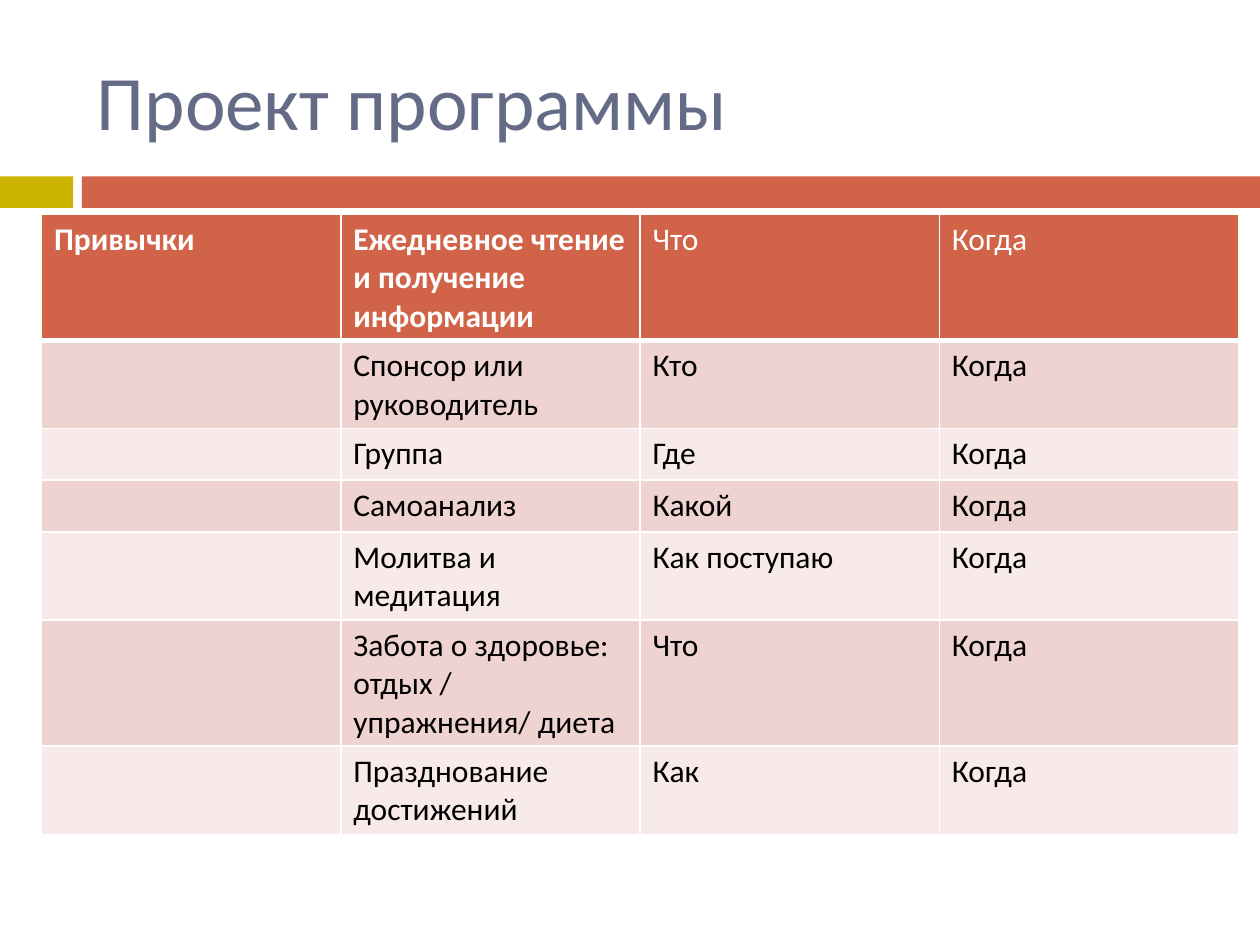
from lxml import etree
from pptx import Presentation
from pptx import util as u
from pptx.dml.color import RGBColor
from pptx.enum import shapes, text
from pptx.oxml.ns import qn

WIDTH, HEIGHT = u.Inches(10), u.Inches(7.5)
FONT = "Calibri"
COLORS = {
    "title": "646B86",
    "accent": "CCB400",
    "header": "D16349",
    "band_dark": "EED3D0",
    "band_light": "F7EAE9",
    "white": "FFFFFF",
    "body": "000000",
}
PROGRAM = [
    ("Привычки", "Ежедневное чтение и получение информации", "Что", "Когда"),
    ("", "Спонсор или руководитель", "Кто", "Когда"),
    ("", "Группа", "Где", "Когда"),
    ("", "Самоанализ", "Какой", "Когда"),
    ("", "Молитва и медитация", "Как поступаю", "Когда"),
    ("", "Забота о здоровье: отдых / упражнения/ диета", "Что", "Когда"),
    ("", "Празднование достижений", "Как", "Когда"),
]
BOLD_HEADERS = 2


def color(name):
    return RGBColor.from_string(COLORS[name])


def box(left, top, width, height):
    """Turn lengths in inches into slide units."""
    return [u.Inches(length) for length in (left, top, width, height)]


def write(frame, words, color_name, **font_format):
    run = frame.paragraphs[0].add_run()
    run.text = words
    run.font.color.rgb = color(color_name)
    for key, value in {"name": FONT, **font_format}.items():
        setattr(run.font, key, value)


def add_bar(slide, left, width, color_name):
    bar = slide.shapes.add_shape(
        shapes.MSO_SHAPE.RECTANGLE, *box(left, 1.4, width, 0.25))
    bar.shadow.inherit = False
    bar.fill.solid()
    bar.fill.fore_color.rgb = color(color_name)
    bar.line.fill.background()


def add_title(slide, words):
    frame = slide.shapes.add_textbox(*box(0.67, 0.25, 8.92, 1.08)).text_frame
    frame.word_wrap = True
    frame.vertical_anchor = text.MSO_ANCHOR.MIDDLE
    write(frame, words, "title", size=u.Pt(44))


def set_borders(cell, bottom):
    """Draw white cell borders, 1 pt wide except for the bottom one."""
    properties = cell._tc.get_or_add_tcPr()
    for side, points in {"L": 1, "R": 1, "T": 1, "B": bottom}.items():
        line = etree.SubElement(
            properties, qn(f"a:ln{side}"), w=str(u.Pt(points)))
        fill = etree.SubElement(line, qn("a:solidFill"))
        etree.SubElement(fill, qn("a:srgbClr"), val=COLORS["white"])


def add_program(slide, rows):
    columns = len(rows[0])
    row_height = 0.41
    table = slide.shapes.add_table(
        len(rows), columns,
        *box(0.33, 1.7, 9.5, row_height * len(rows))).table
    for r, row in enumerate(rows):
        is_header = r == 0
        band = "header" if is_header else "band_dark" if r % 2 else "band_light"
        for c, words in enumerate(row):
            cell = table.cell(r, c)
            set_borders(cell, bottom=3 if is_header else 1)
            cell.fill.solid()
            cell.fill.fore_color.rgb = color(band)
            if words:
                write(cell.text_frame, words, "white" if is_header else "body",
                      size=u.Pt(18), bold=is_header and c < BOLD_HEADERS)


def main():
    deck = Presentation()
    deck.slide_width, deck.slide_height = WIDTH, HEIGHT
    slide = deck.slides.add_slide(deck.slide_layouts[6])
    add_bar(slide, 0, 0.58, "accent")
    add_bar(slide, 0.65, 9.35, "header")
    add_title(slide, "Проект программы")
    add_program(slide, PROGRAM)
    deck.save("out.pptx")


if __name__ == "__main__":
    main()
